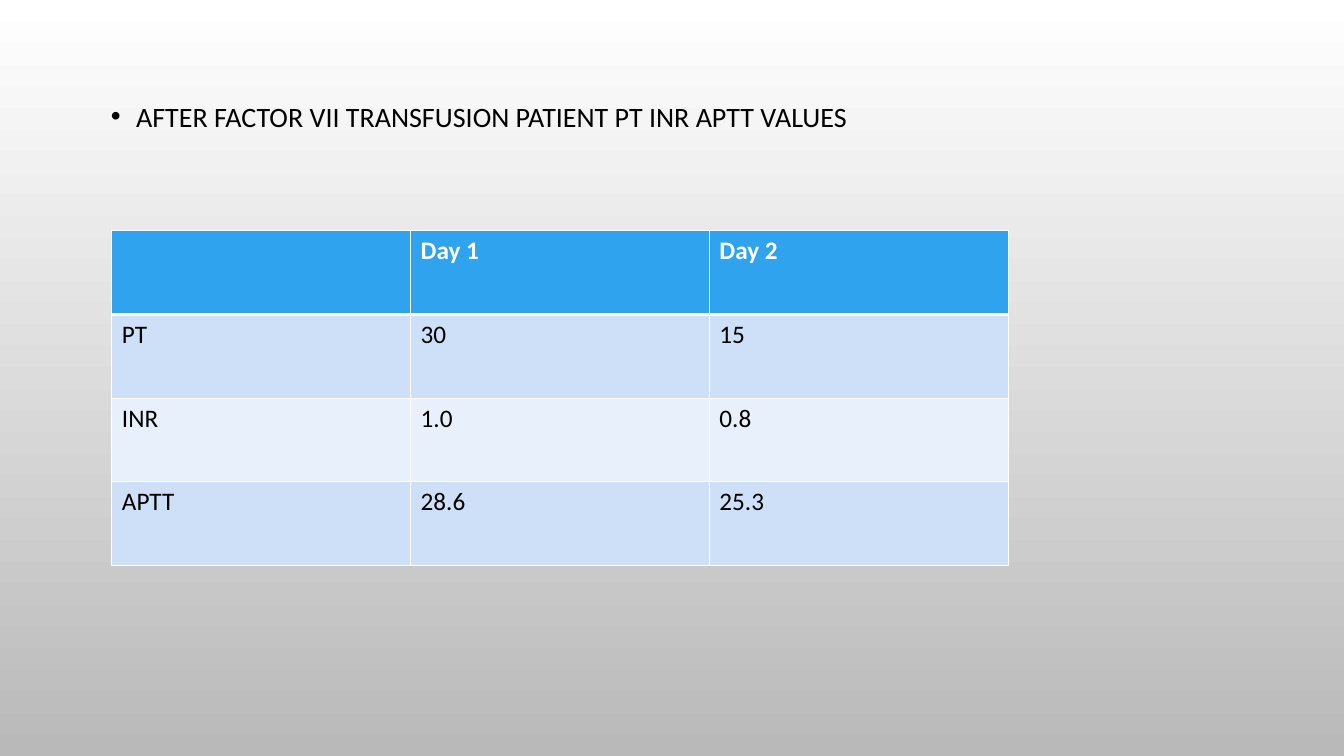
from dataclasses import dataclass

import lxml.etree
import pptx
import pptx.dml.color
import pptx.enum.text
import pptx.oxml.ns
import pptx.util

Inches = pptx.util.Inches
Pt = pptx.util.Pt
RGBColor = pptx.dml.color.RGBColor
qn = pptx.oxml.ns.qn

WHITE = RGBColor(0xFF, 0xFF, 0xFF)
BLACK = RGBColor(0x00, 0x00, 0x00)
GREY = RGBColor(0xB9, 0xB9, 0xB9)
HEADER_BLUE = RGBColor(0x2F, 0xA3, 0xEE)
BAND_BLUE = RGBColor(0xCD, 0xE0, 0xF8)
PALE_BLUE = RGBColor(0xE8, 0xF0, 0xFC)
FONT = "Calibri"


@dataclass
class TableRow:
    values: tuple[str, str, str]
    fill: RGBColor
    color: RGBColor = BLACK
    bold: bool = False
    top_border: float = 1
    bottom_border: float = 1


ROWS = [
    TableRow(("", "Day 1", "Day 2"), HEADER_BLUE, WHITE, bold=True, bottom_border=3),
    TableRow(("PT", "30", "15"), BAND_BLUE, top_border=3),
    TableRow(("INR", "1.0", "0.8"), PALE_BLUE),
    TableRow(("APTT", "28.6", "25.3"), BAND_BLUE),
]


def set_background(slide) -> None:
    fill = slide.background.fill
    fill.gradient()
    fill.gradient_angle = 270
    for stop, color, position in zip(fill.gradient_stops, (WHITE, GREY), (0, 1)):
        stop.color.rgb = color
        stop.position = position


def format_font(font, size: float, color: RGBColor, bold: bool = False) -> None:
    font.name = FONT
    font.size = Pt(size)
    font.bold = bold
    font.color.rgb = color


def add_bullet(paragraph) -> None:
    properties = paragraph._p.get_or_add_pPr()
    properties.set("marL", str(Inches(0.25)))
    properties.set("indent", str(-Inches(0.25)))
    bullet_color = lxml.etree.SubElement(properties, qn("a:buClr"))
    lxml.etree.SubElement(bullet_color, qn("a:srgbClr"), val=str(BLACK))
    lxml.etree.SubElement(properties, qn("a:buFont"), typeface="Arial")
    lxml.etree.SubElement(properties, qn("a:buChar"), char="•")


def fill_body(body) -> None:
    body.left, body.top = Inches(1), Inches(0.87)
    body.width, body.height = Inches(11.33), Inches(5.46)
    text_frame = body.text_frame
    text_frame.text = "AFTER FACTOR VII TRANSFUSION PATIENT PT INR APTT VALUES"
    text_frame.vertical_anchor = pptx.enum.text.MSO_ANCHOR.TOP
    paragraph = text_frame.paragraphs[0]
    add_bullet(paragraph)
    paragraph.line_spacing = 1.2
    paragraph.space_before = Pt(0)
    format_font(paragraph.runs[0].font, 20, BLACK)


def add_border(cell, side: str, width: float) -> None:
    properties = cell._tc.get_or_add_tcPr()
    line = lxml.etree.SubElement(properties, qn(f"a:{side}"), w=str(Pt(width)))
    solid = lxml.etree.SubElement(line, qn("a:solidFill"))
    lxml.etree.SubElement(solid, qn("a:srgbClr"), val=str(WHITE))


def format_cell(cell, value: str, row: TableRow) -> None:
    borders = {"lnL": 1, "lnR": 1, "lnT": row.top_border, "lnB": row.bottom_border}
    for side, width in borders.items():
        add_border(cell, side, width)
    cell.fill.solid()
    cell.fill.fore_color.rgb = row.fill
    cell.text_frame.text = value
    for run in cell.text_frame.paragraphs[0].runs:
        format_font(run.font, 18, row.color, row.bold)


def add_values_table(slide) -> None:
    table = slide.shapes.add_table(
        len(ROWS), 3, Inches(1.11), Inches(2.29), Inches(8.89), Inches(3.32)
    ).table
    for row_index, row in enumerate(ROWS):
        for column_index, value in enumerate(row.values):
            format_cell(table.cell(row_index, column_index), value, row)


def main() -> None:
    presentation = pptx.Presentation()
    presentation.slide_width = Inches(13.33)
    presentation.slide_height = Inches(7.5)
    slide = presentation.slides.add_slide(presentation.slide_layouts[1])
    title = slide.shapes.title._element
    title.getparent().remove(title)
    set_background(slide)
    fill_body(slide.placeholders[1])
    add_values_table(slide)
    presentation.save("out.pptx")


if __name__ == "__main__":
    main()
